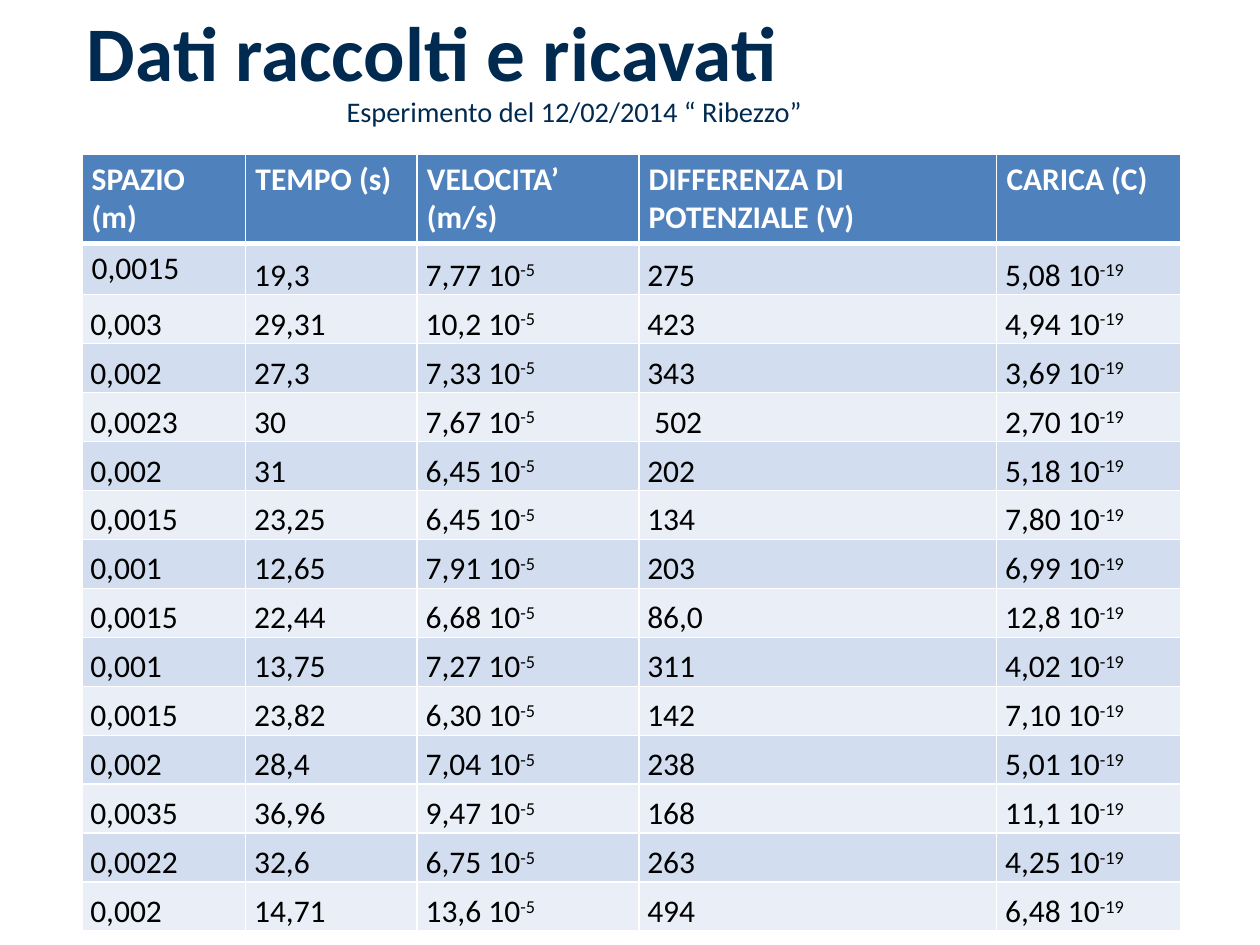
"""Build the slide with the table of measured and derived data."""
from dataclasses import dataclass
from typing import Any, NamedTuple

from lxml.etree import SubElement as Sub
from pptx import Presentation as Deck
from pptx.dml.color import RGBColor as Rgb
from pptx.enum.text import MSO_ANCHOR as Anchor, MSO_AUTO_SIZE as Fit, PP_ALIGN as Align
from pptx.oxml.ns import qn
from pptx.util import Pt


@dataclass(frozen=True)
class Theme:
    """Colours, font and type sizes."""
    font: str = "Calibri"
    navy: str = "002A50"
    blue: str = "4F81BD"
    bands: tuple[str, str] = ("D2DEEF", "EAEFF7")
    white: str = "FFFFFF"
    black: str = "000000"
    title: float = 44.1
    sub: float = 16.2
    cell: float = 18
    thin: float = 1
    thick: float = 3


class Trial(NamedTuple):
    """One row of the table."""
    space: str
    time: str
    speed: str
    volts: str
    charge: str


THEME = Theme()
HEADS = Trial("SPAZIO (m)", "TEMPO (s)", "VELOCITA’ (m/s)",
              "DIFFERENZA DI POTENZIALE (V)", "CARICA (C)")
TRIALS = [
    Trial("0,0015", "19,3", "7,77", "275", "5,08"),
    Trial("0,003", "29,31", "10,2", "423", "4,94"),
    Trial("0,002", "27,3", "7,33", "343", "3,69"),
    Trial("0,0023", "30", "7,67", " 502", "2,70"),
    Trial("0,002", "31", "6,45", "202", "5,18"),
    Trial("0,0015", "23,25", "6,45", "134", "7,80"),
    Trial("0,001", "12,65", "7,91", "203", "6,99"),
    Trial("0,0015", "22,44", "6,68", "86,0", "12,8"),
    Trial("0,001", "13,75", "7,27", "311", "4,02"),
    Trial("0,0015", "23,82", "6,30", "142", "7,10"),
    Trial("0,002", "28,4", "7,04", "238", "5,01"),
    Trial("0,0035", "36,96", "9,47", "168", "11,1"),
    Trial("0,0022", "32,6", "6,75", "263", "4,25"),
    Trial("0,002", "14,71", "13,6", "494", "6,48"),
]
POWERS = {"speed": "-5", "charge": "-19"}
WIDTHS = (93.6, 98, 126.7, 204.5, 105.4)
HEAD_H, ROW_H = 46.8, 28
ROOMY = {"vertical_anchor": Anchor.TOP, "margin_left": Pt(5.6), "margin_right": Pt(5.6),
         "margin_top": Pt(3.6), "margin_bottom": Pt(3.6)}
TIGHT = {"vertical_anchor": Anchor.BOTTOM, "margin_left": Pt(4.8), "margin_right": Pt(0.7),
         "margin_top": Pt(0.7), "margin_bottom": Pt(0)}


def apply(thing: Any, form: dict[str, Any]) -> None:
    """Set every format value on the object."""
    for name, value in form.items():
        setattr(thing, name, value)


def write(para: Any, text: str, size: float, tint: str, bold: bool = False) -> Any:
    """Add a formatted run to a paragraph."""
    run = para.add_run()
    run.text = text
    apply(run.font, {"name": THEME.font, "size": Pt(size), "bold": bold})
    run.font.color.rgb = Rgb.from_string(tint)
    return run


def edge(cell: Any, row: int) -> None:
    """Draw the white borders of a cell, thick below the header."""
    props = cell._tc.get_or_add_tcPr()
    thick = {(0, "B"), (1, "T")}
    for side in "LRTB":
        width = THEME.thick if (row, side) in thick else THEME.thin
        line = Sub(props, qn(f"a:ln{side}"), w=str(Pt(width)))
        Sub(Sub(line, qn("a:solidFill")), qn("a:srgbClr"), val=THEME.white)


def fill(cell: Any, row: int, field: str, text: str) -> None:
    """Write and format one table cell."""
    head = row == 0
    apply(cell, ROOMY if head or (row, field) == (1, "space") else TIGHT)
    edge(cell, row)
    cell.fill.solid()
    shade = THEME.blue if head else THEME.bands[(row - 1) % 2]
    cell.fill.fore_color.rgb = Rgb.from_string(shade)
    para = cell.text_frame.paragraphs[0]
    tint = THEME.white if head else THEME.black
    power = None if head else POWERS.get(field)
    write(para, f"{text} 10" if power else text, THEME.cell, tint, head)
    if power:
        run = write(para, power, THEME.cell, tint)
        run.font._element.set("baseline", "30000")


def add_title(slide: Any) -> None:
    """Set the heading and its subtitle in the title placeholder."""
    box = slide.shapes.title
    apply(box, {"left": Pt(42.5), "top": Pt(19.5), "width": Pt(571), "height": Pt(43)})
    frame = box.text_frame
    apply(frame, {"auto_size": Fit.NONE, "word_wrap": True, "vertical_anchor": Anchor.MIDDLE})
    head, sub = frame.paragraphs[0], frame.add_paragraph()
    apply(head, {"alignment": Align.LEFT, "line_spacing": 0.9})
    apply(sub, {"alignment": Align.CENTER, "line_spacing": 0.9})
    write(head, "Dati raccolti e ricavati", THEME.title, THEME.navy, True)
    write(sub, "Esperimento del 12/02/2014 “ Ribezzo”", THEME.sub, THEME.navy)


def add_grid(slide: Any) -> None:
    """Add the table of trials."""
    rows = [HEADS, *TRIALS]
    high = HEAD_H + ROW_H * len(TRIALS)
    grid = slide.shapes.add_table(len(rows), len(WIDTHS), Pt(46.8), Pt(88),
                                  Pt(sum(WIDTHS)), Pt(high)).table
    for col, width in zip(grid.columns, WIDTHS):
        col.width = Pt(width)
    for i, trial in enumerate(rows):
        grid.rows[i].height = Pt(ROW_H if i else HEAD_H)
        for j, (field, text) in enumerate(zip(Trial._fields, trial)):
            fill(grid.cell(i, j), i, field, text)


def main() -> None:
    """Build and save the deck."""
    deck = Deck()
    apply(deck, {"slide_width": Pt(720), "slide_height": Pt(540)})
    slide = deck.slides.add_slide(deck.slide_layouts[5])
    add_title(slide)
    add_grid(slide)
    deck.save("out.pptx")


if __name__ == "__main__":
    main()
